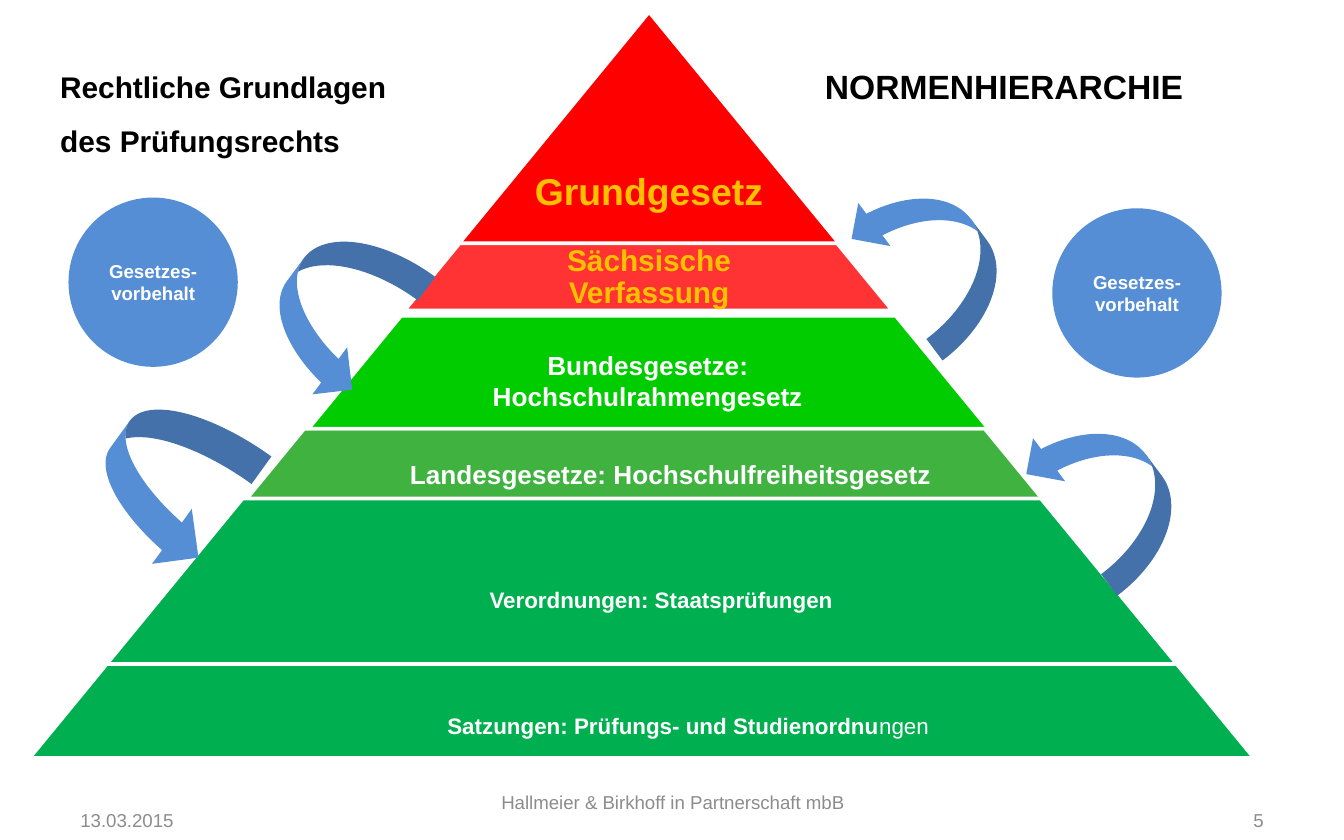
import pptx
import pptx.util
import pptx.dml.color
import pptx.enum.shapes
import pptx.enum.text
import pptx.oxml.ns
import lxml.etree
from dataclasses import dataclass

Inches = pptx.util.Inches
Pt = pptx.util.Pt
Shape = pptx.enum.shapes.MSO_SHAPE
Align = pptx.enum.text.PP_ALIGN
Anchor = pptx.enum.text.MSO_ANCHOR
qn = pptx.oxml.ns.qn


@dataclass(frozen=True)
class Theme:
    font: str = "Arial"
    white: str = "FFFFFF"
    black: str = "000000"
    gray: str = "8C8C8C"
    gold: str = "FFC000"
    blue: str = "558ED5"
    constitution: str = "FF0000"
    federal: str = "00CC00"
    state: str = "009900"
    decree: str = "00B050"
    slope: float = 0.821
    rule: float = 2
    small: int = 10
    body: int = 12
    law: int = 14
    heading: int = 16
    title: int = 18
    top: int = 20


class Builder:
    def __init__(self, slide, theme):
        self.slide = slide
        self.theme = theme

    def rgb(self, color):
        return pptx.dml.color.RGBColor.from_string(color)

    def fill_text(self, frame, lines, size, color, bold=True, align=Align.CENTER,
                  spacing=None, anchor=Anchor.MIDDLE):
        frame.word_wrap = True
        frame.vertical_anchor = anchor
        for index, line in enumerate(lines):
            paragraph = frame.paragraphs[0] if index == 0 else frame.add_paragraph()
            paragraph.alignment = align
            if spacing:
                paragraph.line_spacing = spacing
            paragraph.font.name = self.theme.font
            paragraph.font.size = Pt(size)
            paragraph.font.bold = bold
            paragraph.font.color.rgb = self.rgb(color)
            paragraph.add_run().text = line

    def text(self, box, lines, size, color, **style):
        area = self.slide.shapes.add_textbox(*map(Inches, box))
        self.fill_text(area.text_frame, lines, size, color, **style)
        return area.text_frame

    def label(self, center, middle, width, line, size, color, spacing=None):
        height = 0.6
        box = (center - width / 2, middle - height / 2, width, height)
        return self.text(box, [line], size, color, spacing=spacing)

    def shape(self, kind, box, color, rotation=0):
        figure = self.slide.shapes.add_shape(kind, *map(Inches, box))
        figure.shadow.inherit = False
        figure.rotation = rotation
        figure.fill.solid()
        figure.fill.fore_color.rgb = self.rgb(color)
        figure.line.fill.background()
        return figure

    def tier(self, box, color, opacity=100):
        band = self.shape(Shape.TRAPEZOID, box, color)
        band.adjustments[0] = self.theme.slope
        band.line.color.rgb = self.rgb(self.theme.white)
        band.line.width = Pt(self.theme.rule)
        if opacity < 100:
            tint = band._element.spPr.find(qn("a:solidFill"))[0]
            lxml.etree.SubElement(tint, qn("a:alpha"), val=str(opacity * 1000))

    def circle(self, left, top, line):
        disc = self.shape(Shape.OVAL, (left, top, 1.26, 1.26), self.theme.blue)
        self.fill_text(disc.text_frame, [line], self.theme.small, self.theme.white)

    def divider(self, left, right, height):
        rule = self.slide.shapes.add_connector(
            pptx.enum.shapes.MSO_CONNECTOR.STRAIGHT,
            Inches(left), Inches(height), Inches(right), Inches(height))
        rule.line.color.rgb = self.rgb(self.theme.white)
        rule.line.width = Pt(self.theme.rule)
        lxml.etree.SubElement(rule._element.spPr, qn("a:effectLst"))


def main():
    deck = pptx.Presentation()
    deck.slide_width = Inches(10)
    deck.slide_height = Inches(6.25)
    theme = Theme()
    page = Builder(deck.slides.add_slide(deck.slide_layouts[6]), theme)

    footers = [
        ((0.5, 5.94, 2.33, 0.33), "13.03.2015", Align.LEFT),
        ((3.11, 5.8, 3.79, 0.33), "Hallmeier & Birkhoff in Partnerschaft mbB", Align.CENTER),
        ((7.17, 5.94, 2.33, 0.33), "5", Align.RIGHT),
    ]
    for box, line, align in footers:
        page.text(box, [line], theme.small, theme.gray, bold=False, align=align)

    tiers = [
        ((3.4, 0.09, 2.86, 1.74), theme.constitution, 100),
        ((3.01, 1.81, 3.63, 0.5), theme.constitution, 80),
        ((2.27, 2.35, 5.11, 0.87), theme.federal, 100),
        ((1.77, 3.19, 6.05, 0.6), theme.state, 75),
        ((0.22, 3.71, 9.11, 1.93), theme.decree, 100),
    ]
    for box, color, opacity in tiers:
        page.tier(box, color, opacity)
    page.divider(0.67, 9.33, 4.94)

    page.label(4.83, 1.42, 2.8, "Grundgesetz", theme.top, theme.gold)
    page.label(4.83, 2.07, 2.36, "Sächsische Verfassung", theme.heading, theme.gold, 0.9)
    page.label(4.82, 2.83, 3.32, "Bundesgesetze: Hochschulrahmengesetz", theme.law, theme.white)
    page.label(4.99, 3.53, 4.3, "Landesgesetze: Hochschulfreiheitsgesetz", theme.law, theme.white)
    page.label(4.92, 4.46, 3.62, "Verordnungen: Staatsprüfungen", theme.body, theme.white)
    statutes = page.label(5.12, 5.4, 5.28, "Satzungen: Prüfungs- und Studienordnu",
                          theme.body, theme.white)
    ending = statutes.paragraphs[0].add_run()
    ending.text = "ngen"
    ending.font.bold = False

    heading_style = dict(align=Align.LEFT, spacing=1.5, anchor=Anchor.TOP)
    page.text((0.35, 0.33, 3.2, 0.92), ["Rechtliche Grundlagen", "des Prüfungsrechts"],
              theme.heading, theme.black, **heading_style)
    page.text((6.04, 0.29, 3.13, 0.5), ["NORMENHIERARCHIE"],
              theme.title, theme.black, **heading_style)

    arrows = [
        (Shape.CURVED_RIGHT_ARROW, (2.08, 1.68, 0.87, 1.26), 36.4),
        (Shape.CURVED_RIGHT_ARROW, (0.76, 2.99, 1.01, 1.18), 35.8),
        (Shape.CURVED_UP_ARROW, (6.27, 1.51, 1.33, 0.8), 233.2),
        (Shape.CURVED_UP_ARROW, (7.57, 3.26, 1.33, 0.8), 233.2),
    ]
    for kind, box, rotation in arrows:
        page.shape(kind, box, theme.blue, rotation)

    for left, top in [(0.51, 1.47), (7.83, 1.55)]:
        page.circle(left, top, "Gesetzes-vorbehalt")

    deck.save("out.pptx")


if __name__ == "__main__":
    main()
